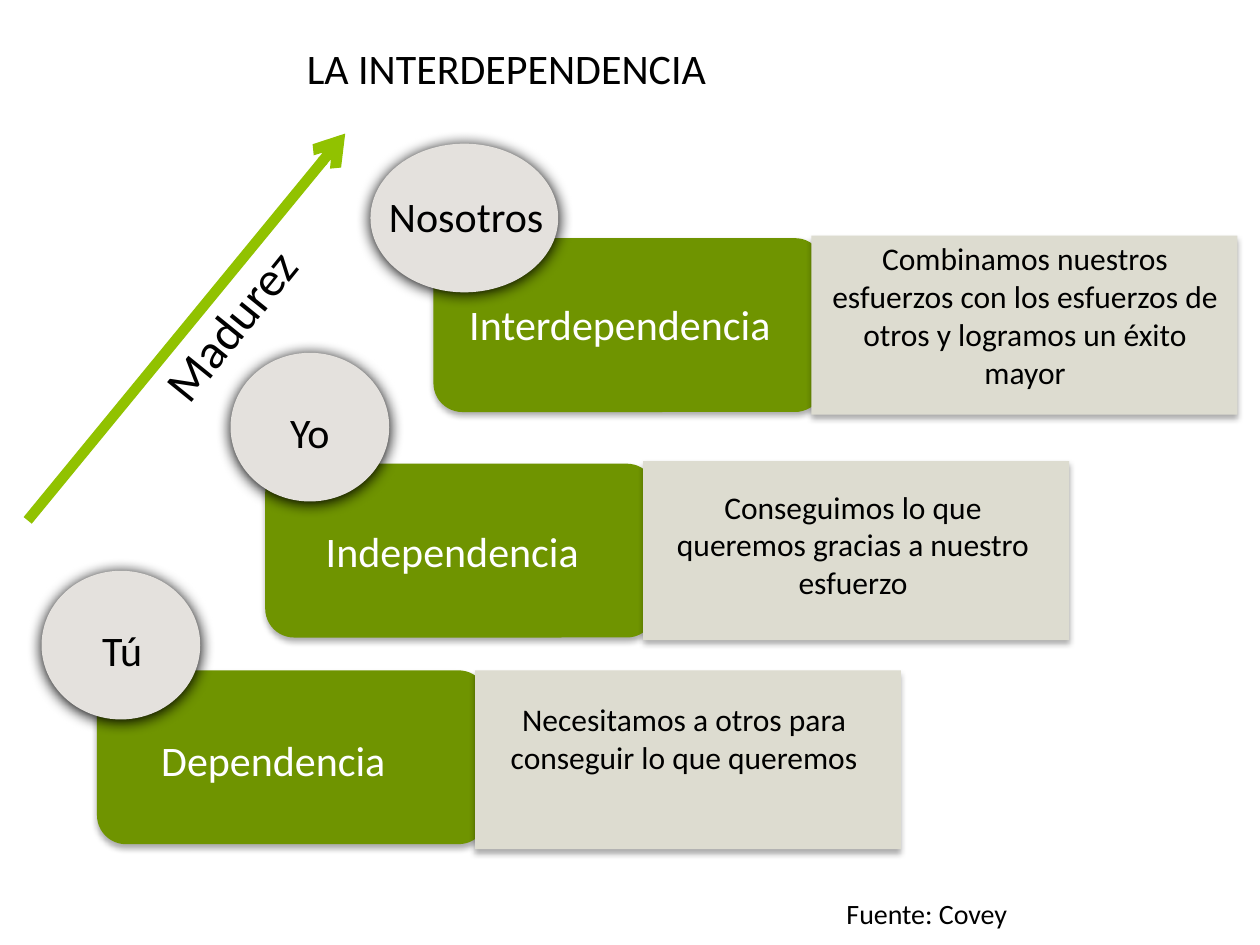
from lxml import etree
from pptx import Presentation
from pptx import util as u
from pptx.dml.color import RGBColor
from pptx.enum import shapes, text
from pptx.oxml import ns

COLORS = {
    "black": "000000",
    "white": "FFFFFF",
    "block": "6F9400",
    "panel": "DDDCD0",
    "circle": "E4E1DD",
    "arrow": "91C200",
}
FONT = "Calibri"
CELL = u.Inches(0.1)  # the slide is a grid of 100 columns by 75 rows
SOFT_SHADOW = {"alpha": 32, "blur": 3.5, "distance": 2.2}
DARK_SHADOW = {"alpha": 100, "blur": 8.5, "distance": 1}

BLOCK_SIZE = (31, 13.8)
PANEL_SIZE = (33.8, 14.2)
LABEL_SIZE = (34, 5)
PANEL_OFFSET = 30
STEP = 13.35  # columns between one level and the next

# Boxes are left, top, width, height in grid cells.
LEVELS = [
    {
        "block_top": 18.9, "panel_top": 18.7,
        "name": "Interdependencia", "name_at": (32.2, 23.2),
        "who": "Nosotros", "who_box": (28.6, 14.6, 16.8, 5),
        "circle": (29.4, 11.4, 14.9, 11.8),
        "detail": "Combinamos nuestros esfuerzos con los esfuerzos de "
                  "otros y logramos un éxito mayor",
        "detail_box": (64.4, 18.5, 33.9, 14.5),
    },
    {
        "block_top": 36.8, "panel_top": 36.6,
        "name": "Independencia", "name_at": (18.9, 41.2),
        "who": "Yo", "who_box": (17.1, 31.8, 15, 5),
        "circle": (18.3, 28, 12.6, 11.8),
        "detail": "Conseguimos lo que queremos gracias a nuestro esfuerzo",
        "detail_box": (52.1, 38.2, 31.2, 11.1),
    },
    {
        "block_top": 53.2, "panel_top": 53.2,
        "name": "Dependencia", "name_at": (4.7, 57.8),
        "who": "Tú", "who_box": (2.2, 49.1, 15, 5),
        "circle": (3.3, 45.3, 12.6, 11.8),
        "detail": "Necesitamos a otros para conseguir lo que queremos",
        "detail_box": (38.7, 55.1, 31.2, 11.1),
    },
]


def cells(*counts):
    return [round(count * CELL) for count in counts]


def color(name):
    return RGBColor.from_string(COLORS[name])


class StairSlide:
    """Holds the slide and draws each kind of element on its grid."""

    def __init__(self, presentation):
        self.slide = presentation.slides.add_slide(presentation.slide_layouts[6])

    def shape(self, kind, box, fill, shadow):
        shape = self.slide.shapes.add_shape(kind, *cells(*box))
        shape.fill.solid()
        shape.fill.fore_color.rgb = color(fill)
        shape.line.fill.background()
        shape.shadow.inherit = False
        self.cast_shadow(shape, **shadow)

    def cast_shadow(self, shape, alpha, blur, distance):
        effects = shape._element.spPr.find(ns.qn("a:effectLst"))
        outer = etree.SubElement(
            effects, ns.qn("a:outerShdw"), blurRad=str(u.Pt(blur)),
            dist=str(u.Pt(distance)), dir="5400000", rotWithShape="0")
        shade = etree.SubElement(outer, ns.qn("a:srgbClr"), val=COLORS["black"])
        etree.SubElement(shade, ns.qn("a:alpha"), val=str(alpha * 1000))

    def label(self, words, box, size=24, ink="black", rotation=0,
              align=text.PP_ALIGN.CENTER, wrap=True):
        text_box = self.slide.shapes.add_textbox(*cells(*box))
        text_box.rotation = rotation
        frame = text_box.text_frame
        frame.word_wrap = wrap
        paragraph = frame.paragraphs[0]
        paragraph.alignment = align
        run = paragraph.add_run()
        run.text = words
        run.font.name = FONT
        run.font.size = u.Pt(size)
        run.font.color.rgb = color(ink)

    def arrow(self, start, end, ink, width):
        connector = self.slide.shapes.add_connector(
            shapes.MSO_CONNECTOR.STRAIGHT, *cells(*start, *end))
        connector.line.color.rgb = color(ink)
        connector.line.width = u.Pt(width)
        line = connector._element.spPr.find(ns.qn("a:ln"))
        etree.SubElement(line, ns.qn("a:tailEnd"), type="arrow")
        etree.SubElement(connector._element.spPr, ns.qn("a:effectLst"))

    def level(self, index, level):
        """Draw one step: block, panel and circle with their texts."""
        left = 34.4 - index * STEP
        preset = shapes.MSO_SHAPE
        self.shape(preset.ROUNDED_RECTANGLE,
                   (left, level["block_top"], *BLOCK_SIZE), "block", SOFT_SHADOW)
        self.shape(preset.RECTANGLE,
                   (left + PANEL_OFFSET, level["panel_top"], *PANEL_SIZE),
                   "panel", SOFT_SHADOW)
        self.shape(preset.OVAL, level["circle"], "circle", DARK_SHADOW)
        self.label(level["who"], level["who_box"])
        self.label(level["name"], (*level["name_at"], *LABEL_SIZE), ink="white")
        self.label(level["detail"], level["detail_box"], size=18)


def main():
    presentation = Presentation()
    presentation.slide_width = 100 * CELL
    presentation.slide_height = 75 * CELL

    stairs = StairSlide(presentation)
    stairs.label("LA INTERDEPENDENCIA", (2.7, 2.9, 75, 10.3))
    for index, level in enumerate(LEVELS):
        stairs.level(index, level)
    stairs.arrow((2.2, 41.3), (27.4, 10.6), "arrow", width=6)
    stairs.label("Madurez", (9.1, 22.9, 18.3, 5.7), size=28, rotation=308.9)
    stairs.label("Fuente: Covey", (66.2, 70.7, 16.6, 3.7), size=16,
                 align=text.PP_ALIGN.LEFT, wrap=False)
    presentation.save("out.pptx")


if __name__ == "__main__":
    main()
